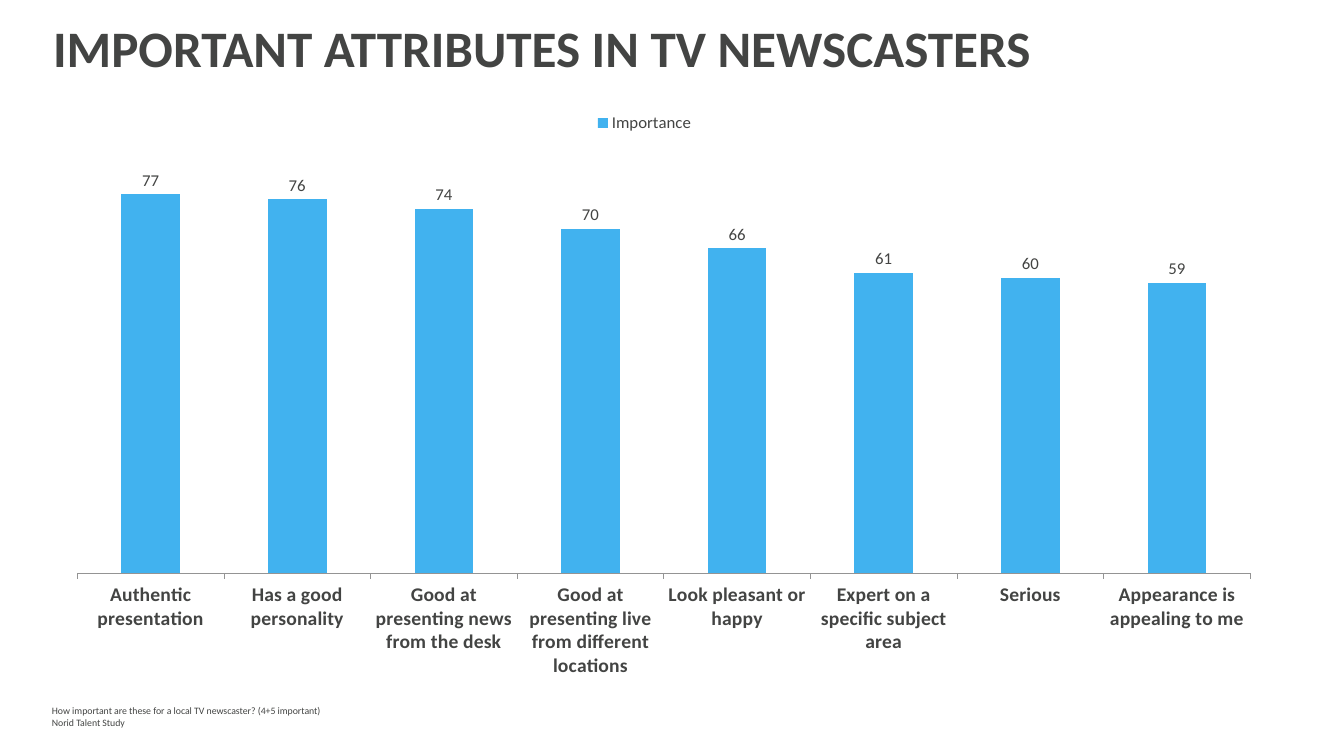
from lxml import etree
from pptx import Presentation
from pptx.chart.data import CategoryChartData
from pptx.dml.color import RGBColor
from pptx.enum.chart import XL_CHART_TYPE, XL_LABEL_POSITION, XL_LEGEND_POSITION, XL_TICK_MARK
from pptx.enum.text import MSO_ANCHOR, PP_ALIGN
from pptx.oxml.ns import qn
from pptx.util import Emu, Pt

COLUMNS = XL_CHART_TYPE.COLUMN_CLUSTERED
OUTSIDE_END = XL_LABEL_POSITION.OUTSIDE_END
LEGEND_TOP = XL_LEGEND_POSITION.TOP
TICK_OUT, TICK_NONE = XL_TICK_MARK.OUTSIDE, XL_TICK_MARK.NONE
TOP, LEFT = MSO_ANCHOR.TOP, PP_ALIGN.LEFT

TITLE = "IMPORTANT ATTRIBUTES IN TV NEWSCASTERS"
NOTES = [
    "How important are these for a local TV newscaster? (4+5 important)",
    "Norid Talent Study",
]
SERIES = "Importance"
ATTRIBUTES = [
    ("Authentic presentation", 77),
    ("Has a good personality", 76),
    ("Good at presenting news from the desk", 74),
    ("Good at presenting live from different locations", 70),
    ("Look pleasant or happy", 66),
    ("Expert on a specific subject area", 61),
    ("Serious", 60),
    ("Appearance is appealing to me", 59),
]
FONT, INK, BLUE, GREY = "Calibri", "434443", "41B2EF", "949494"
PLOT_AREA = {"x": 0.06, "y": 0.05, "w": 0.91, "h": 0.78}
SLIDE_SIZE = (1344, 756)
TITLE_BOX = (42, 18, 1226, 74)
CHART_BOX = (0, 102, 1289, 576)
NOTES_BOX = (42, 700, 1044, 40)


def px(length):
    return Emu(round(length * 914400 / 100.8))


def color(value):
    return RGBColor.from_string(value)


def style(font, size, bold=False):
    font.name, font.size, font.bold = FONT, Pt(size), bold
    font.color.rgb = color(INK)


def add_title(page):
    box = page.shapes.title
    box.left, box.top, box.width, box.height = map(px, TITLE_BOX)
    frame = box.text_frame
    frame.text = TITLE
    frame.vertical_anchor = TOP
    para = frame.paragraphs[0]
    para.alignment, para.line_spacing = LEFT, 0.9
    para._p.get_or_add_pPr().set("marL", str(px(1)))
    style(para.runs[0].font, 36.5, True)


def add_notes(page):
    frame = page.shapes.add_textbox(*map(px, NOTES_BOX)).text_frame
    frame.word_wrap = True
    frame.text = "\n".join(NOTES)
    for para in frame.paragraphs:
        style(para.runs[0].font, 7)


def place_plot(chart):
    plot_area = chart._chartSpace.chart.plotArea
    for old in plot_area.findall(qn("c:layout")):
        plot_area.remove(old)
    layout = etree.Element(qn("c:layout"))
    manual = etree.SubElement(layout, qn("c:manualLayout"))
    settings = [("layoutTarget", "inner"), ("xMode", "edge"), ("yMode", "edge")]
    for name, value in settings + list(PLOT_AREA.items()):
        etree.SubElement(manual, qn(f"c:{name}")).set("val", str(value))
    plot_area.insert(0, layout)


def add_importance_chart(page):
    data = CategoryChartData()
    data.categories = [name for name, value in ATTRIBUTES]
    data.add_series(SERIES, [value for name, value in ATTRIBUTES])
    chart = page.shapes.add_chart(COLUMNS, *map(px, CHART_BOX), data).chart
    style(chart.font, 18)
    chart.has_title = False
    chart.has_legend = True
    chart.legend.position = LEGEND_TOP
    chart.legend.include_in_layout = False
    style(chart.legend.font, 12)

    names = chart.category_axis
    names.major_tick_mark = TICK_OUT
    names.minor_tick_mark = TICK_NONE
    names.format.line.color.rgb = color(GREY)
    names.format.line.width = Pt(0.5)
    style(names.tick_labels.font, 14, True)

    scale = chart.value_axis
    scale.minimum_scale, scale.maximum_scale = 0, 90
    scale.has_major_gridlines = False
    scale.visible = False

    plot = chart.plots[0]
    plot.gap_width, plot.vary_by_categories = 150, False
    fill = plot.series[0].format.fill
    fill.solid()
    fill.fore_color.rgb = color(BLUE)
    plot.has_data_labels = True
    labels = plot.data_labels
    labels.show_value, labels.position = True, OUTSIDE_END
    style(labels.font, 12)
    place_plot(chart)


def main():
    deck = Presentation()
    deck.slide_width, deck.slide_height = map(px, SLIDE_SIZE)
    page = deck.slides.add_slide(deck.slide_layouts[5])
    add_notes(page)
    add_title(page)
    add_importance_chart(page)
    deck.save("out.pptx")


if __name__ == "__main__":
    main()
